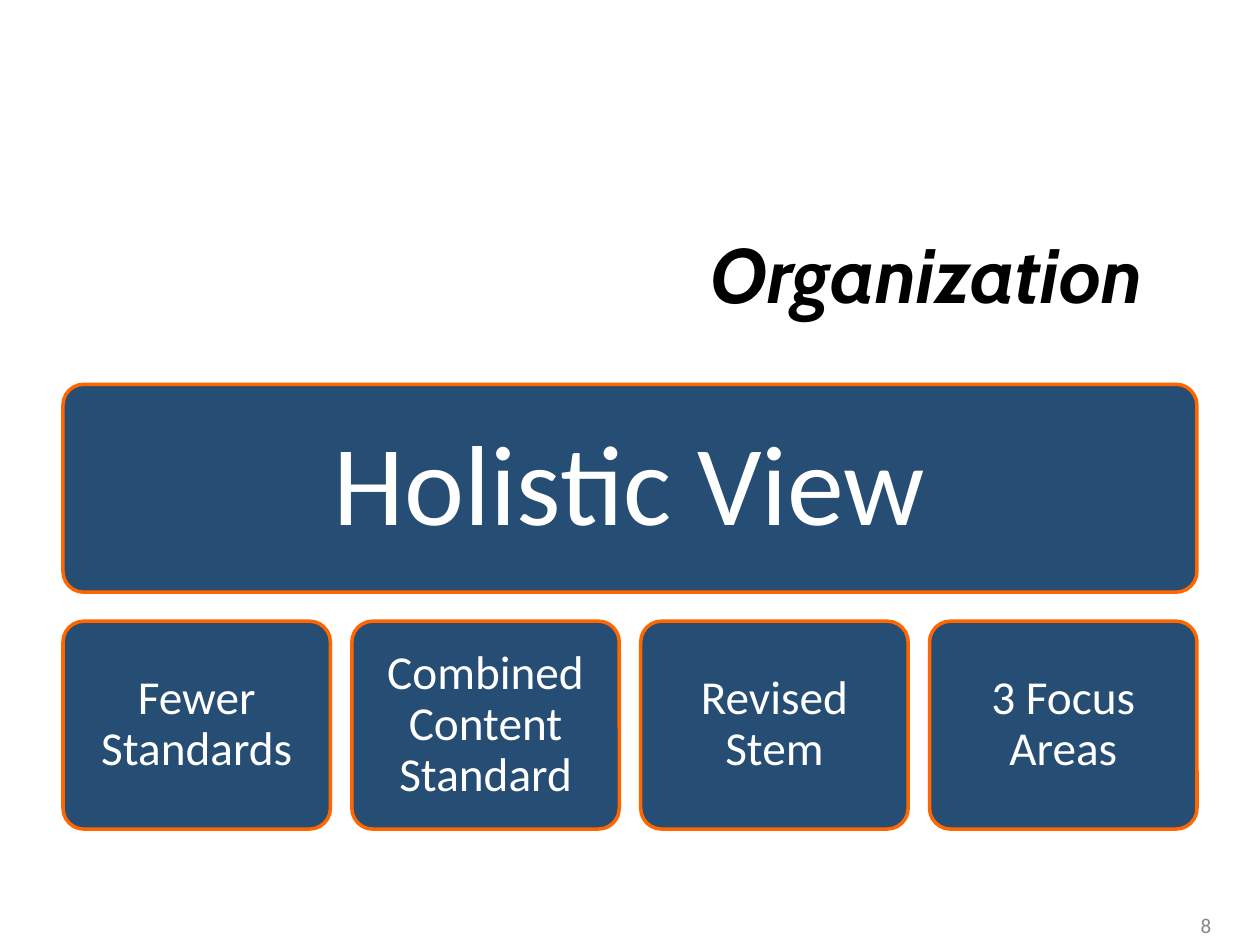
from pptx import Presentation
from pptx.dml.color import RGBColor
from pptx.enum.shapes import MSO_SHAPE
from pptx.enum.text import MSO_ANCHOR, PP_ALIGN
from pptx.util import Inches, Pt

ROUNDED = MSO_SHAPE.ROUNDED_RECTANGLE
MIDDLE = MSO_ANCHOR.MIDDLE
CENTER, RIGHT = PP_ALIGN.CENTER, PP_ALIGN.RIGHT
NAVY = RGBColor(0x26, 0x4D, 0x73)
ORANGE = RGBColor(0xFF, 0x66, 0x00)
WHITE = RGBColor(0xFF, 0xFF, 0xFF)
BLACK = RGBColor(0x00, 0x00, 0x00)
GRAY = RGBColor(0x87, 0x87, 0x87)

LEFT, WIDTH, GAP = 0.5, 9, 0.17
CARD_HEIGHT = 1.65
VIEW_TOP, CHANGES_TOP = 3.05, 4.93
CHANGES = ["Fewer Standards", "Combined Content Standard", "Revised Stem", "3 Focus Areas"]


class SlideBuilder:
    """Holds the slide and the style of its elements."""

    title_font = "Cabin"
    body_font = "Calibri"

    def __init__(self, slide):
        self.slide = slide

    def set_text(self, shape, text, size, color, alignment, font, margin):
        frame = shape.text_frame
        frame.text = text
        frame.vertical_anchor = MIDDLE
        frame.margin_left = frame.margin_right = Inches(margin)
        frame.margin_top = frame.margin_bottom = Inches(margin)
        paragraph = frame.paragraphs[0]
        paragraph.alignment = alignment
        run_font = paragraph.runs[0].font
        run_font.name = font
        run_font.size = Pt(size)
        run_font.color.rgb = color
        return paragraph

    def title(self, text, left, top, width, height):
        shape = self.slide.shapes.title
        shape.left, shape.top = Inches(left), Inches(top)
        shape.width, shape.height = Inches(width), Inches(height)
        paragraph = self.set_text(shape, text, 44, BLACK, RIGHT, self.title_font, 0.04)
        paragraph.runs[0].font.bold = True
        paragraph.runs[0].font.italic = True

    def card(self, text, left, top, width, size, margin):
        shape = self.slide.shapes.add_shape(
            ROUNDED, Inches(left), Inches(top), Inches(width), Inches(CARD_HEIGHT)
        )
        shape.adjustments[0] = 0.1
        shape.shadow.inherit = False
        shape.fill.solid()
        shape.fill.fore_color.rgb = NAVY
        shape.line.color.rgb = ORANGE
        shape.line.width = Pt(2)
        paragraph = self.set_text(shape, text, size, WHITE, CENTER, self.body_font, margin)
        paragraph.line_spacing = 0.9

    def page_number(self, text, left, top, width, height):
        box = self.slide.shapes.add_textbox(
            Inches(left), Inches(top), Inches(width), Inches(height)
        )
        self.set_text(box, text, 12, GRAY, RIGHT, self.body_font, 0.05)
        box.text_frame.word_wrap = False


def main():
    presentation = Presentation()
    presentation.slide_width = Inches(10)
    presentation.slide_height = Inches(7.5)
    slide = presentation.slides.add_slide(presentation.slide_layouts[5])
    builder = SlideBuilder(slide)

    builder.title("Organization ", 0.25, 1.5, 9, 1.33)
    builder.card("Holistic View", LEFT, VIEW_TOP, WIDTH, 65, 0.27)
    card_width = (WIDTH - GAP * (len(CHANGES) - 1)) / len(CHANGES)
    for index, change in enumerate(CHANGES):
        left = LEFT + index * (card_width + GAP)
        builder.card(change, left, CHANGES_TOP, card_width, 27, 0.11)
    builder.page_number("8", 9.48, 7.2, 0.18, 0.28)

    presentation.save("out.pptx")


if __name__ == "__main__":
    main()
